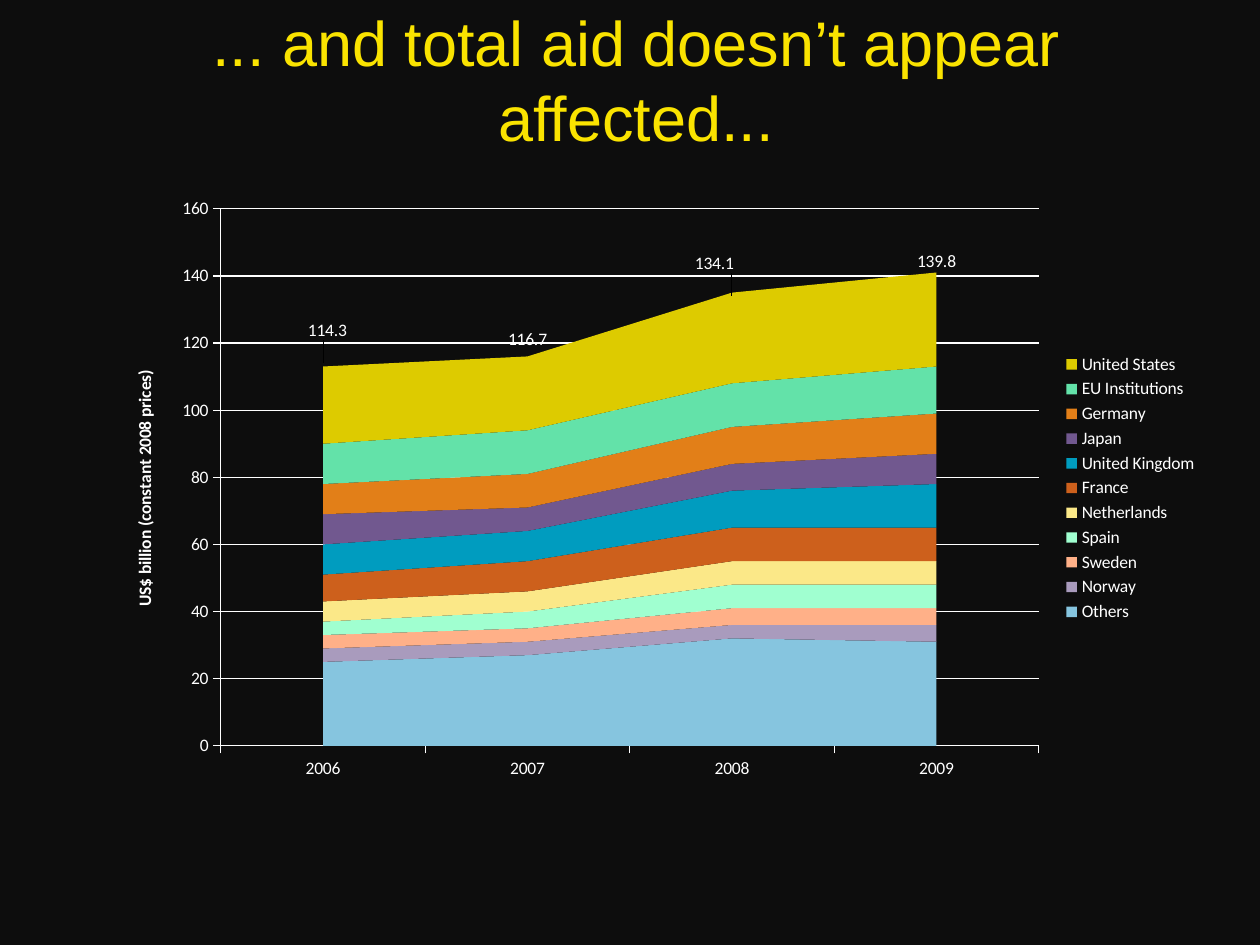
from lxml.etree import SubElement
from pptx import Presentation
from pptx.chart.data import CategoryChartData
from pptx.dml.color import RGBColor
from pptx.enum.chart import XL_CHART_TYPE as ChartType, XL_LABEL_POSITION as LabelPosition
from pptx.enum.chart import XL_LEGEND_POSITION as LegendPosition, XL_MARKER_STYLE as MarkerStyle
from pptx.enum.chart import XL_TICK_MARK as TickMark
from pptx.enum.text import MSO_ANCHOR as Anchor, PP_ALIGN as Align
from pptx.oxml import parse_xml
from pptx.oxml.ns import nsdecls, qn
from pptx.util import Inches, Pt

TITLE = "... and total aid doesn’t appear affected..."
AXIS_TITLE = "US$ billion (constant 2008 prices)"
COLORS = {"background": "0D0D0D", "title": "FAE300", "text": "FFFFFF"}
YEARS = ["2006", "2007", "2008", "2009"]
DONORS = [
    ("Others", [25, 27, 32, 31], "86C5DF"),
    ("Norway", [4, 4, 4, 5], "A99BBD"),
    ("Sweden", [4, 4, 5, 5], "FFB088"),
    ("Spain", [4, 5, 7, 7], "A0FFD0"),
    ("Netherlands", [6, 6, 7, 7], "FBE888"),
    ("France", [8, 9, 10, 10], "CD601C"),
    ("United Kingdom", [9, 9, 11, 13], "009CBF"),
    ("Japan", [9, 7, 8, 9], "71588F"),
    ("Germany", [9, 10, 11, 12], "E27F18"),
    ("EU Institutions", [12, 13, 13, 14], "63E2A9"),
    ("United States", [23, 22, 27, 28], "DDCB00"),
]
TOTALS = ("Series 12", [114.3, 116.7, 134.1, 139.8])
LABEL_SHIFTS = {0: {"x": 0.004, "y": -0.028}, 2: {"x": -0.016, "y": -0.028}}
PLOT_LAYOUT = {"layoutTarget": "inner", "xMode": "edge", "yMode": "edge",
               "x": 0.102, "y": 0.037, "w": 0.742, "h": 0.89}
LEGEND_LAYOUT = {"xMode": "edge", "yMode": "edge", "x": 0.862, "y": 0.27, "w": 0.13, "h": 0.46}
C15 = "http://schemas.microsoft.com/office/drawing/2012/chart"
LABEL_EXTENSION = "{CE6537A1-D6FC-4f65-9D91-7224C49458BB}"


def color(name):
    return RGBColor.from_string(COLORS[name])


def set_layout(parent, position, values):
    for old in parent.findall(qn("c:layout")):
        parent.remove(old)
    layout = parse_xml(f"<c:layout {nsdecls('c')}><c:manualLayout/></c:layout>")
    for tag, value in values.items():
        SubElement(layout[0], qn(f"c:{tag}")).set("val", str(value))
    parent.insert(position, layout)


def move_totals_to_line(chart):
    area = chart.plots[0]._element
    line = parse_xml(f'<c:lineChart {nsdecls("c")}><c:grouping val="standard"/>'
                     '<c:varyColors val="0"/></c:lineChart>')
    line.append(area.findall(qn("c:ser"))[-1])
    SubElement(line, qn("c:marker")).set("val", "1")
    for axis in area.findall(qn("c:axId")):
        SubElement(line, qn("c:axId")).set("val", axis.get("val"))
    area.addnext(line)


def format_totals(series):
    series.smooth = False
    series.format.line.fill.background()
    series.marker.style = MarkerStyle.NONE
    labels = series.data_labels
    labels.show_value = True
    labels.position = LabelPosition.ABOVE
    labels.number_format = "#,##0.0"
    labels.number_format_is_linked = False
    for index in LABEL_SHIFTS:
        series.points[index].data_label.position = LabelPosition.ABOVE
    for label in labels._element.findall(qn("c:dLbl")):
        index = int(label.find(qn("c:idx")).get("val"))
        set_layout(label, 1, LABEL_SHIFTS[index])
    labels._element.append(parse_xml(
        f'<c:extLst {nsdecls("c")}><c:ext uri="{LABEL_EXTENSION}" xmlns:c15="{C15}">'
        '<c15:showLeaderLines val="0"/></c:ext></c:extLst>'))


def format_axes(chart):
    for axis in (chart.category_axis, chart.value_axis):
        axis.major_tick_mark = TickMark.OUTSIDE
        axis.format.line.color.rgb = color("text")
        axis.format.line.width = Pt(0.75)
    value_axis = chart.value_axis
    value_axis.minimum_scale, value_axis.maximum_scale, value_axis.major_unit = 0, 160, 20
    value_axis.tick_labels.number_format = "#,##0"
    value_axis.tick_labels.number_format_is_linked = False
    value_axis.has_major_gridlines = True
    value_axis.major_gridlines.format.line.color.rgb = color("text")
    value_axis.major_gridlines.format.line.width = Pt(0.75)
    value_axis._element.find(qn("c:crossBetween")).set("val", "between")
    text_frame = value_axis.axis_title.text_frame
    text_frame.text = AXIS_TITLE
    font = text_frame.paragraphs[0].font
    font.name, font.size, font.bold = "Calibri", Pt(10), True
    font.color.rgb = color("text")


def add_legend(chart):
    chart.has_legend = True
    legend = chart.legend
    legend.position = LegendPosition.RIGHT
    legend.include_in_layout = False
    entry = parse_xml(f'<c:legendEntry {nsdecls("c")}><c:idx val="{len(DONORS)}"/>'
                      '<c:delete val="1"/></c:legendEntry>')
    legend._element.insert(1, entry)
    set_layout(legend._element, 2, LEGEND_LAYOUT)


def add_aid_chart(slide):
    data = CategoryChartData()
    data.categories = YEARS
    for name, values, _ in DONORS:
        data.add_series(name, values)
    data.add_series(*TOTALS)
    chart = slide.shapes.add_chart(ChartType.AREA_STACKED, Inches(0.86), Inches(1.48),
                                   Inches(8.75), Inches(4.79), data).chart
    chart.has_title = False
    chart.font.name, chart.font.size = "Calibri", Pt(10)
    chart.font.color.rgb = color("text")
    move_totals_to_line(chart)
    areas, line = chart.plots
    areas.vary_by_categories = False
    for series, (_, _, fill) in zip(areas.series, DONORS):
        series.format.fill.solid()
        series.format.fill.fore_color.rgb = RGBColor.from_string(fill)
        series.format.line.fill.background()
    format_totals(line.series[0])
    format_axes(chart)
    add_legend(chart)
    set_layout(areas._element.getparent(), 0, PLOT_LAYOUT)


def add_title(slide):
    title = slide.shapes.title
    title.left, title.top, title.width, title.height = map(Inches, (0.55, 0, 9, 1.25))
    title.text_frame.text = TITLE
    title.text_frame.vertical_anchor = Anchor.MIDDLE
    paragraph = title.text_frame.paragraphs[0]
    paragraph.alignment = Align.CENTER
    paragraph.font.name, paragraph.font.size = "Arial", Pt(36)
    paragraph.font.color.rgb = color("title")


def main():
    presentation = Presentation()
    presentation.slide_width, presentation.slide_height = Inches(10), Inches(7.5)
    slide = presentation.slides.add_slide(presentation.slide_layouts[5])
    slide.background.fill.solid()
    slide.background.fill.fore_color.rgb = color("background")
    add_title(slide)
    add_aid_chart(slide)
    presentation.save("out.pptx")


if __name__ == "__main__":
    main()
